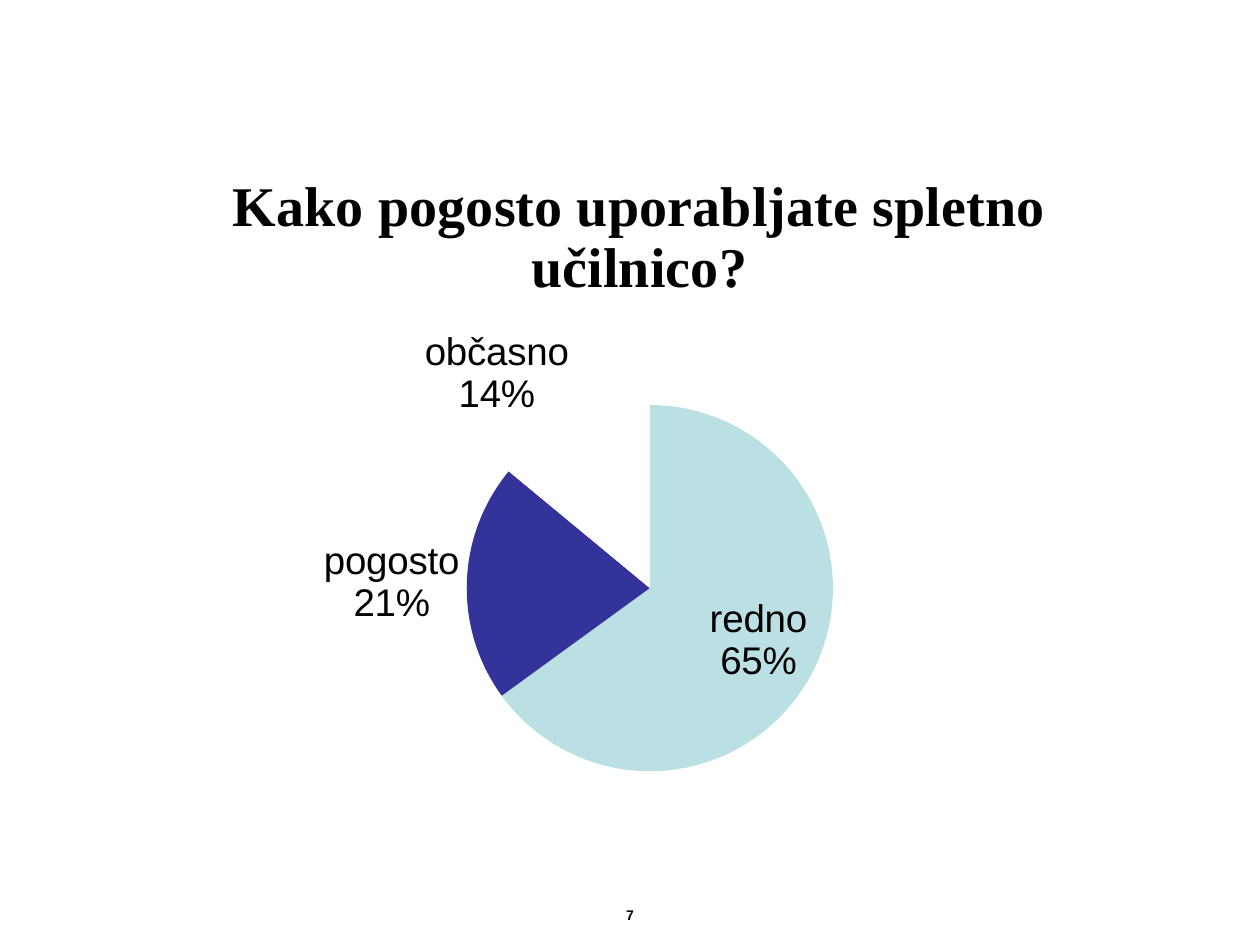
import copy
import dataclasses

import pptx
import pptx.chart.data
import pptx.dml.color
import pptx.enum.chart
import pptx.enum.text
import pptx.oxml
import pptx.oxml.ns
import pptx.util

Pt = pptx.util.Pt
NS = pptx.oxml.ns.nsdecls("c")


@dataclasses.dataclass
class Theme:
    text: str = "000000"
    slices: tuple = ("BBE0E3", "333399", "FFFFFF")
    title_font: str = "Times New Roman"
    body_font: str = "Arial"
    title_size: int = 32
    label_size: int = 22
    number_size: int = 8


def rgb(value):
    return pptx.dml.color.RGBColor.from_string(value)


def layout(inner=False, **values):
    """Manual chart layout, in fractions of the chart area."""
    target = '<c:layoutTarget val="inner"/>' if inner else ""
    modes = "".join(f'<c:{k}Mode val="edge"/>' for k in "xy") if "edge" in values else ""
    sizes = "".join(f'<c:{k} val="{values[k]}"/>' for k in "xywh" if k in values)
    return pptx.oxml.parse_xml(
        f"<c:layout {NS}><c:manualLayout>{target}{modes}{sizes}"
        "</c:manualLayout></c:layout>")


class SlideBuilder:
    def __init__(self, prs, theme):
        self.theme = theme
        self.s = prs.slides.add_slide(prs.slide_layouts[6])

    def style(self, font, size, name, bold=False):
        font.size, font.name, font.bold = Pt(size), name, bold
        font.color.rgb = rgb(self.theme.text)

    def text(self, text, x, y, w, h):
        tf = self.s.shapes.add_textbox(Pt(x), Pt(y), Pt(w), Pt(h)).text_frame
        tf.word_wrap = True
        tf.vertical_anchor = pptx.enum.text.MSO_ANCHOR.MIDDLE
        p = tf.paragraphs[0]
        p.text = text
        p.alignment = pptx.enum.text.PP_ALIGN.CENTER
        self.style(p.font, self.theme.number_size, self.theme.body_font, True)

    def pie(self, title, shares, x, y, w, h):
        t = self.theme
        data = pptx.chart.data.CategoryChartData()
        data.categories = list(shares)
        data.add_series("Series 1", list(shares.values()))
        chart = self.s.shapes.add_chart(
            pptx.enum.chart.XL_CHART_TYPE.PIE,
            Pt(x), Pt(y), Pt(w), Pt(h), data).chart
        chart.has_legend = False
        self.style(chart.font, 10, t.body_font)

        # Title
        tf = chart.chart_title.text_frame
        tf.text = title
        self.style(tf.paragraphs[0].font, t.title_size, t.title_font, True)
        self.place(chart.chart_title._element, layout(edge=True, x=0.17, y=0.05))
        chart.chart_title.include_in_layout = False

        # Pie and slice colours
        self.place(chart._chartSpace.chart.plotArea,
                   layout(True, edge=True, x=0.37, y=0.4, w=0.3, h=0.54))
        plot = chart.plots[0]
        plot.vary_by_categories = True
        series = plot.series[0]
        for i, color in enumerate(t.slices):
            fmt = series.points[i].format
            fmt.fill.solid()
            fmt.fill.fore_color.rgb = rgb(color)
            fmt.line.fill.background()
        self.labels(series)

    def place(self, element, new_layout):
        """Set the layout of a title or plot area."""
        for old in element.findall(pptx.oxml.ns.qn("c:layout")):
            element.remove(old)
        tx = element.find(pptx.oxml.ns.qn("c:tx"))
        if tx is None:
            element.insert(0, new_layout)
        else:
            tx.addnext(new_layout)

    def labels(self, series):
        labels = series.data_labels
        labels.show_value = False
        labels.show_category_name = labels.show_percentage = True
        labels.number_format, labels.number_format_is_linked = "0%", False
        labels.position = pptx.enum.chart.XL_LABEL_POSITION.OUTSIDE_END
        self.style(labels.font, self.theme.label_size, self.theme.body_font)

        # Name and share on separate lines, no leader lines
        group = labels._element
        leader = group.find(pptx.oxml.ns.qn("c:showLeaderLines"))
        if leader is not None:
            group.remove(leader)
        group.append(pptx.oxml.parse_xml(f"<c:separator {NS}>\n</c:separator>"))

        # The first label is moved inside its slice
        first = pptx.oxml.parse_xml(f'<c:dLbl {NS}><c:idx val="0"/></c:dLbl>')
        first.append(layout(x=-0.09, y=-0.11))
        for child in group:
            first.append(copy.deepcopy(child))
        group.insert(0, first)
        group.append(pptx.oxml.parse_xml(f'<c:showLeaderLines {NS} val="0"/>'))


def main():
    prs = pptx.Presentation()
    prs.slide_width, prs.slide_height = Pt(720), Pt(540)
    slide = SlideBuilder(prs, Theme())

    # Page number
    slide.text("7", 36.7, 506, 646.6, 34)

    # Survey result
    slide.pie("Kako pogosto uporabljate spletno učilnico?",
              {"redno": 65, "pogosto": 21, "občasno": 14},
              8.6, 71.3, 697.7, 395.3)

    prs.save("out.pptx")


if __name__ == "__main__":
    main()
